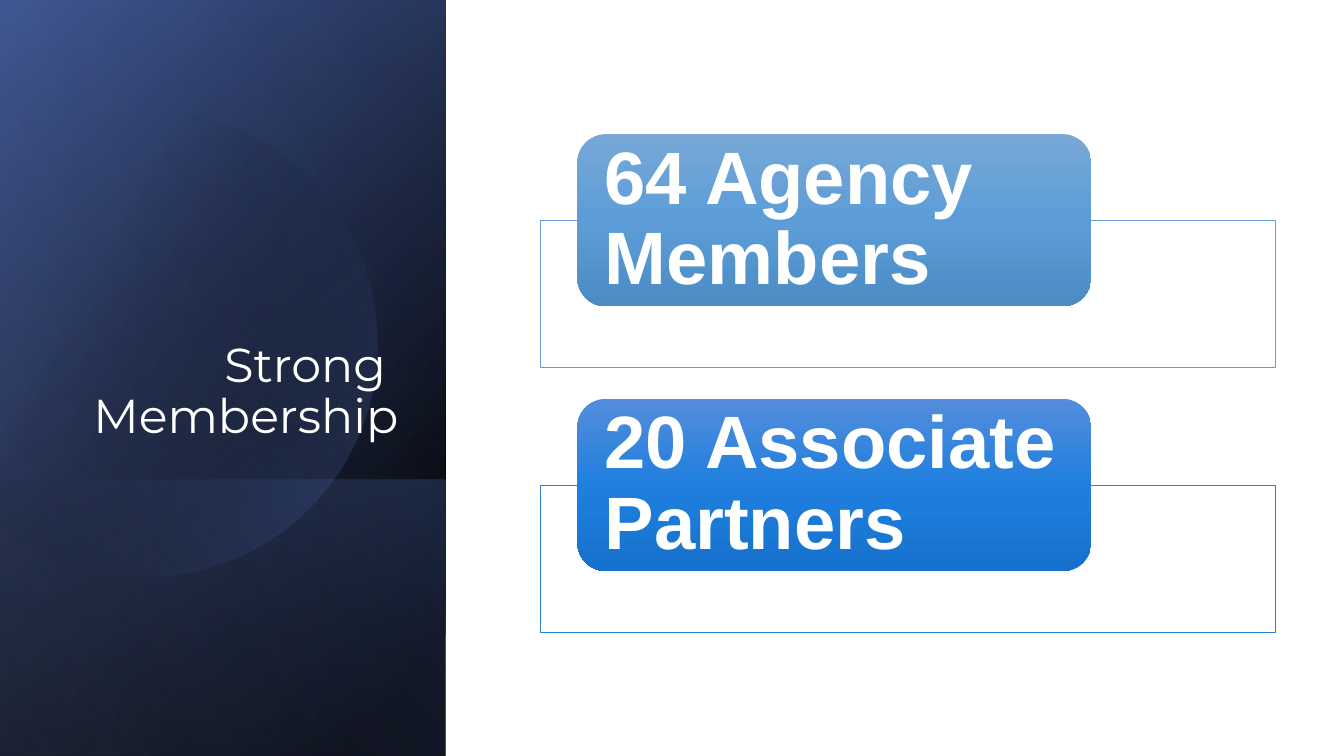
"""Builds the "Strong Membership" slide: a dark gradient panel and two member counts."""
from math import acos, cos, sin
from pptx import Presentation
from pptx.dml.color import RGBColor
from pptx.enum.shapes import MSO_SHAPE
from pptx.enum.text import MSO_ANCHOR, PP_ALIGN
from pptx.oxml import parse_xml
from pptx.oxml.ns import nsdecls, qn
from pptx.util import Cm, Pt

COLORS = {
    "white": "FFFFFF", "black": "000000", "navy": "384C81", "blue": "4A66AC", "pale": "90A2CF",
    "sky_line": "629DD1", "sky_top": "77A8D7", "sky_mid": "5C9DD7", "sky_end": "4C8CC5",
    "royal_line": "297FD5", "royal_top": "538DDC", "royal_mid": "207FDE", "royal_end": "1571CD",
}


def rgb(name):
    return RGBColor.from_string(COLORS[name])


def set_gradient(s, angle, stops):
    """Give the shape a linear gradient of (position, colour, opacity) stops, without line or shadow."""
    s.shadow.inherit = False
    s.line.fill.background()
    s.fill.gradient()
    gs = "".join(
        f'<a:gs pos="{pos * 1000}"><a:srgbClr val="{COLORS[name]}">'
        f'<a:alpha val="{opacity * 1000}"/></a:srgbClr></a:gs>'
        for pos, name, opacity in stops)
    old = s._element.spPr.find(qn("a:gradFill"))
    old.getparent().replace(old, parse_xml(
        f'<a:gradFill {nsdecls("a")} rotWithShape="1"><a:gsLst>{gs}</a:gsLst>'
        f'<a:lin ang="{angle * 60000}" scaled="0"/></a:gradFill>'))


prs = Presentation()
prs.slide_width, prs.slide_height = Cm(33.87), Cm(19.05)
slide = prs.slides.add_slide(prs.slide_layouts[6])
shapes = slide.shapes

full = (-3.91, 3.91, 19.05, 11.23)
lower = (2.13, 9.96, 6.96, 11.23)
panels = [
    (full, 50, [(8, "black", 100), (100, "navy", 100)]),
    (full, 30, [(0, "black", 0), (99, "blue", 46)]),
    (lower, 130, [(2, "blue", 29), (100, "black", 30)]),
    ("disc", 30, [(29, "black", 0), (100, "blue", 43)]),
    (full, 120, [(0, "black", 0), (99, "pale", 11)]),
]
cx, cy, radius, steps = 3.63, 8.64, 5.89, 120
edge = acos(-cx / radius)
arc = [edge * (2 * i / steps - 1) for i in range(steps + 1)]
disc = [(Cm(cx + radius * cos(a)), Cm(cy + radius * sin(a))) for a in arc]

for box, angle, stops in panels:
    if box == "disc":
        builder = shapes.build_freeform(*disc[0])
        builder.add_line_segments(disc[1:], close=True)
        s = builder.convert_to_shape()
    else:
        s = shapes.add_shape(MSO_SHAPE.RECTANGLE, *map(Cm, box))
        s.rotation = 90
        s._element.spPr.xfrm.set("flipH", "1")
    set_gradient(s, angle, stops)

title = shapes.add_textbox(Cm(1.63), Cm(4.67), Cm(8.66), Cm(6.65))
tf = title.text_frame
tf.word_wrap = True
tf.vertical_anchor = MSO_ANCHOR.BOTTOM
p = tf.paragraphs[0]
p.text = "Strong \vMembership"
p.alignment = PP_ALIGN.RIGHT
p.line_spacing = 0.9
p.font.name, p.font.size = "Montserrat", Pt(34)
p.font.color.rgb = rgb("white")

for i, (text, hue) in enumerate([("64 Agency Members", "sky"), ("20 Associate Partners", "royal")]):
    top = 3.38 + 6.67 * i
    frame = shapes.add_shape(MSO_SHAPE.RECTANGLE, Cm(13.61), Cm(top + 2.18), Cm(18.52), Cm(3.71))
    frame.shadow.inherit = False
    frame.fill.solid()
    frame.fill.fore_color.rgb = rgb("white")
    frame.line.color.rgb = rgb(f"{hue}_line")
    frame.line.width = Pt(0.5)

    s = shapes.add_shape(MSO_SHAPE.ROUNDED_RECTANGLE, Cm(14.55), Cm(top), Cm(12.95), Cm(4.34))
    set_gradient(s, 90, [(0, f"{hue}_top", 100), (50, f"{hue}_mid", 100), (100, f"{hue}_end", 100)])
    tf = s.text_frame
    tf.word_wrap = True
    tf.vertical_anchor = MSO_ANCHOR.MIDDLE
    tf.margin_left = tf.margin_right = Cm(0.48)
    tf.margin_top = tf.margin_bottom = 0
    p = tf.paragraphs[0]
    p.text = text
    p.alignment = PP_ALIGN.LEFT
    p.line_spacing = 0.9
    p.font.name, p.font.size, p.font.bold = "Arial", Pt(53), True
    p.font.color.rgb = rgb("white")

prs.save("out.pptx")
